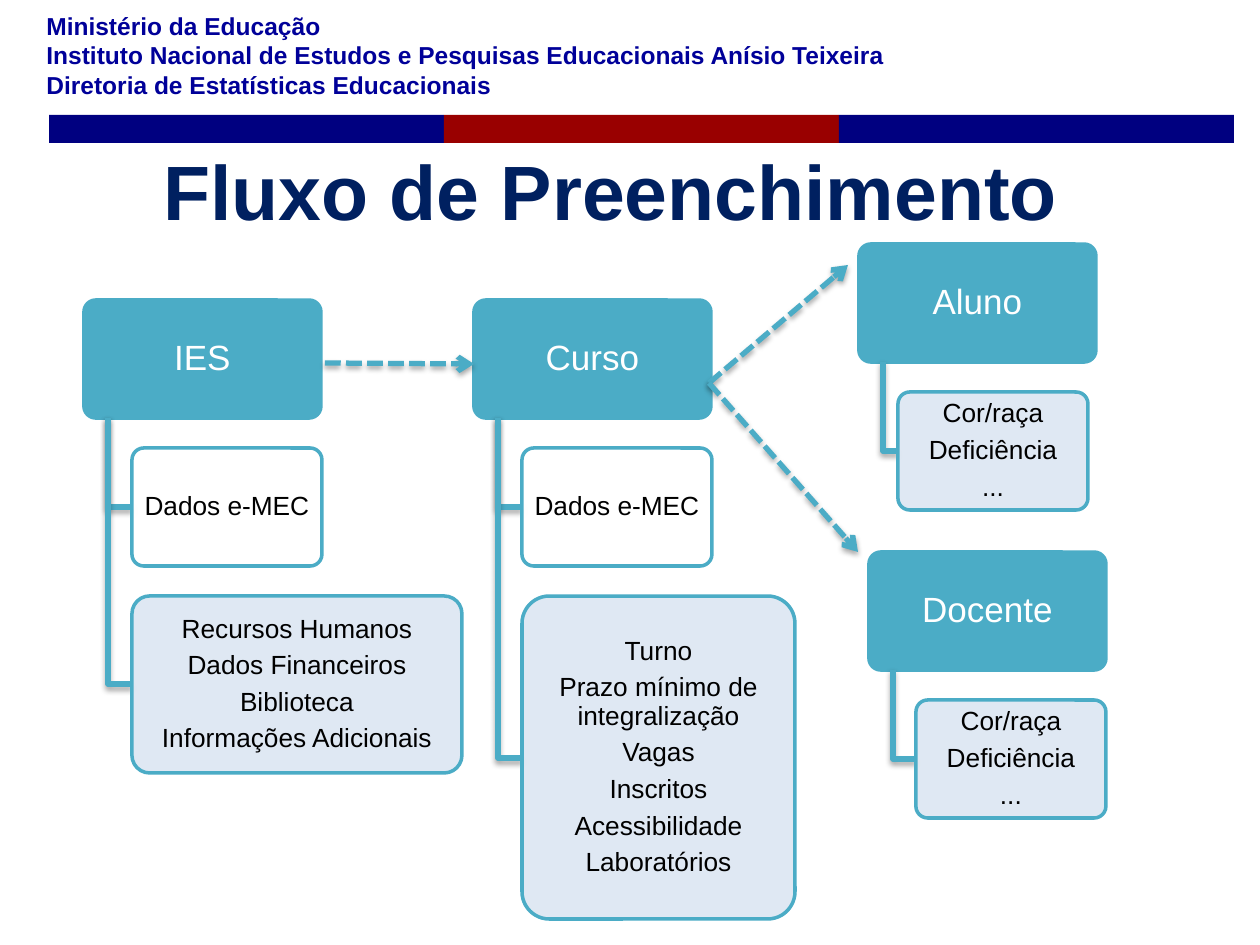
from dataclasses import dataclass

from lxml.etree import SubElement
from pptx import Presentation
from pptx.dml.color import RGBColor
from pptx.enum.dml import MSO_LINE_DASH_STYLE as Dash
from pptx.enum.shapes import MSO_CONNECTOR as Connector, MSO_SHAPE as Preset
from pptx.enum.text import MSO_ANCHOR as Anchor, PP_ALIGN as Align
from pptx.oxml.ns import qn
from pptx.util import Pt


@dataclass(frozen=True)
class Theme:
    font: str = "Arial"
    navy: str = "000080"
    red: str = "990000"
    agency: str = "000099"
    title: str = "002060"
    teal: str = "4BACC6"
    pale: str = "DCE6F2"
    white: str = "FFFFFF"
    black: str = "000000"
    agency_size: int = 14
    title_size: int = 44
    head_size: int = 20
    detail_size: int = 15


THEME = Theme()
SCALE = 914400 / 126
SLIDE_SIZE = (1260, 945)

AGENCY = [
    "Ministério da Educação",
    "Instituto Nacional de Estudos e Pesquisas Educacionais Anísio Teixeira",
    "Diretoria de Estatísticas Educacionais",
]
TITLE = "Fluxo de Preenchimento"
BAND_COLORS = [THEME.navy, THEME.red, THEME.navy]

EMEC = {"lines": ["Dados e-MEC"], "size": (190, 118), "fill": THEME.white}
PERSON = {"lines": ["Cor/raça", "Deficiência", "..."], "size": (190, 118), "fill": THEME.pale}
INSTITUTION = {
    "lines": ["Recursos Humanos", "Dados Financeiros", "Biblioteca", "Informações Adicionais"],
    "size": (330, 177),
    "fill": THEME.pale,
}
COURSE = {
    "lines": ["Turno", "Prazo mínimo de integralização", "Vagas", "Inscritos",
              "Acessibilidade", "Laboratórios"],
    "size": (273, 323),
    "fill": THEME.pale,
}
BRANCHES = [
    {"head": "IES", "at": (84, 300), "indent": 48, "details": [EMEC, INSTITUTION]},
    {"head": "Curso", "at": (474, 300), "indent": 48, "details": [EMEC, COURSE]},
    {"head": "Aluno", "at": (859, 244), "indent": 39, "details": [PERSON]},
    {"head": "Docente", "at": (869, 552), "indent": 47, "details": [PERSON]},
]
ARROWS = [
    ((709, 383), (848, 265)),
    ((709, 383), (858, 552)),
    ((325, 363), (474, 364)),
]
HEAD_WIDTH, HEAD_HEIGHT = 237, 118
TRUNK_INDENT = 24
ROW_GAP = 30


def px(*values):
    return [round(value * SCALE) for value in values]


def rgb(color):
    return RGBColor.from_string(color)


def write(frame, lines, size, color, bold=False, align=Align.CENTER):
    frame.word_wrap = True
    frame.vertical_anchor = Anchor.MIDDLE
    frame.text = "\n".join(lines)
    for paragraph in frame.paragraphs:
        paragraph.alignment = align
        paragraph.font.name = THEME.font
        paragraph.font.size = Pt(size)
        paragraph.font.bold = bold
        paragraph.font.color.rgb = rgb(color)


def add_box(slide, preset, box, fill):
    shape = slide.shapes.add_shape(preset, *px(*box))
    shape.shadow.inherit = False
    shape.fill.solid()
    shape.fill.fore_color.rgb = rgb(fill)
    shape.line.fill.background()
    return shape


def add_card(slide, box, lines, fill, size, color, margins):
    shape = add_box(slide, Preset.ROUNDED_RECTANGLE, box, fill)
    shape.adjustments[0] = 0.1
    shape.line.color.rgb = rgb(THEME.teal)
    shape.line.width = Pt(2)
    frame = shape.text_frame
    write(frame, lines, size, color)
    side, end = px(*margins)
    frame.margin_left = frame.margin_right = side
    frame.margin_top = frame.margin_bottom = end
    for paragraph in frame.paragraphs:
        paragraph.line_spacing = 0.9
        paragraph.space_after = Pt(round(size * 0.31, 1))
    return shape


def set_alpha(shape, percent):
    color = shape.fill._xPr.find(qn("a:solidFill"))[0]
    SubElement(color, qn("a:alpha"), val=str(percent * 1000))


def style_link(link):
    link.line.color.rgb = rgb(THEME.teal)
    link.line.width = Pt(3)
    properties = link._element.spPr
    for effects in properties.findall(qn("a:effectLst")):
        properties.remove(effects)
    effects = SubElement(properties, qn("a:effectLst"))
    shadow = SubElement(effects, qn("a:outerShdw"), blurRad="40000", dist="23000",
                        dir="5400000", rotWithShape="0")
    color = SubElement(shadow, qn("a:srgbClr"), val=THEME.black)
    SubElement(color, qn("a:alpha"), val="35000")


def add_elbow(slide, start, corner, end):
    builder = slide.shapes.build_freeform(*start, scale=SCALE)
    builder.add_line_segments([corner, end], close=False)
    elbow = builder.convert_to_shape()
    elbow.fill.background()
    style_link(elbow)


def add_branch(slide, branch):
    left, top = branch["at"]
    add_card(slide, (left, top, HEAD_WIDTH, HEAD_HEIGHT), [branch["head"]],
             THEME.teal, THEME.head_size, THEME.white, (5, 4))
    trunk = left + TRUNK_INDENT
    bottom = top + HEAD_HEIGHT
    detail_left = left + branch["indent"]
    detail_top = bottom + ROW_GAP
    for detail in branch["details"]:
        width, height = detail["size"]
        middle = detail_top + height / 2
        add_elbow(slide, (trunk, bottom), (trunk, middle), (detail_left, middle))
        card = add_card(slide, (detail_left, detail_top, width, height), detail["lines"],
                        detail["fill"], THEME.detail_size, THEME.black, (4, 3))
        set_alpha(card, 90)
        detail_top += height + ROW_GAP


def add_arrow(slide, start, end):
    arrow = slide.shapes.add_connector(Connector.STRAIGHT, *px(*start, *end))
    style_link(arrow)
    arrow.line.dash_style = Dash.SQUARE_DOT
    SubElement(arrow.line._get_or_add_ln(), qn("a:tailEnd"), type="arrow")


def main():
    presentation = Presentation()
    presentation.slide_width, presentation.slide_height = px(*SLIDE_SIZE)
    slide = presentation.slides.add_slide(presentation.slide_layouts[5])

    for index, color in enumerate(BAND_COLORS):
        add_box(slide, Preset.RECTANGLE, (49 + index * 395, 115, 395, 28), color)
    agency = slide.shapes.add_textbox(*px(34, 4, 1216, 102))
    write(agency.text_frame, AGENCY, THEME.agency_size, THEME.agency, True, Align.LEFT)

    title = slide.shapes.title
    title.left, title.top, title.width, title.height = px(44, 145, 1134, 90)
    write(title.text_frame, [TITLE], THEME.title_size, THEME.title, True)

    for branch in BRANCHES:
        add_branch(slide, branch)
    for start, end in ARROWS:
        add_arrow(slide, start, end)
    presentation.save("out.pptx")


if __name__ == "__main__":
    main()
